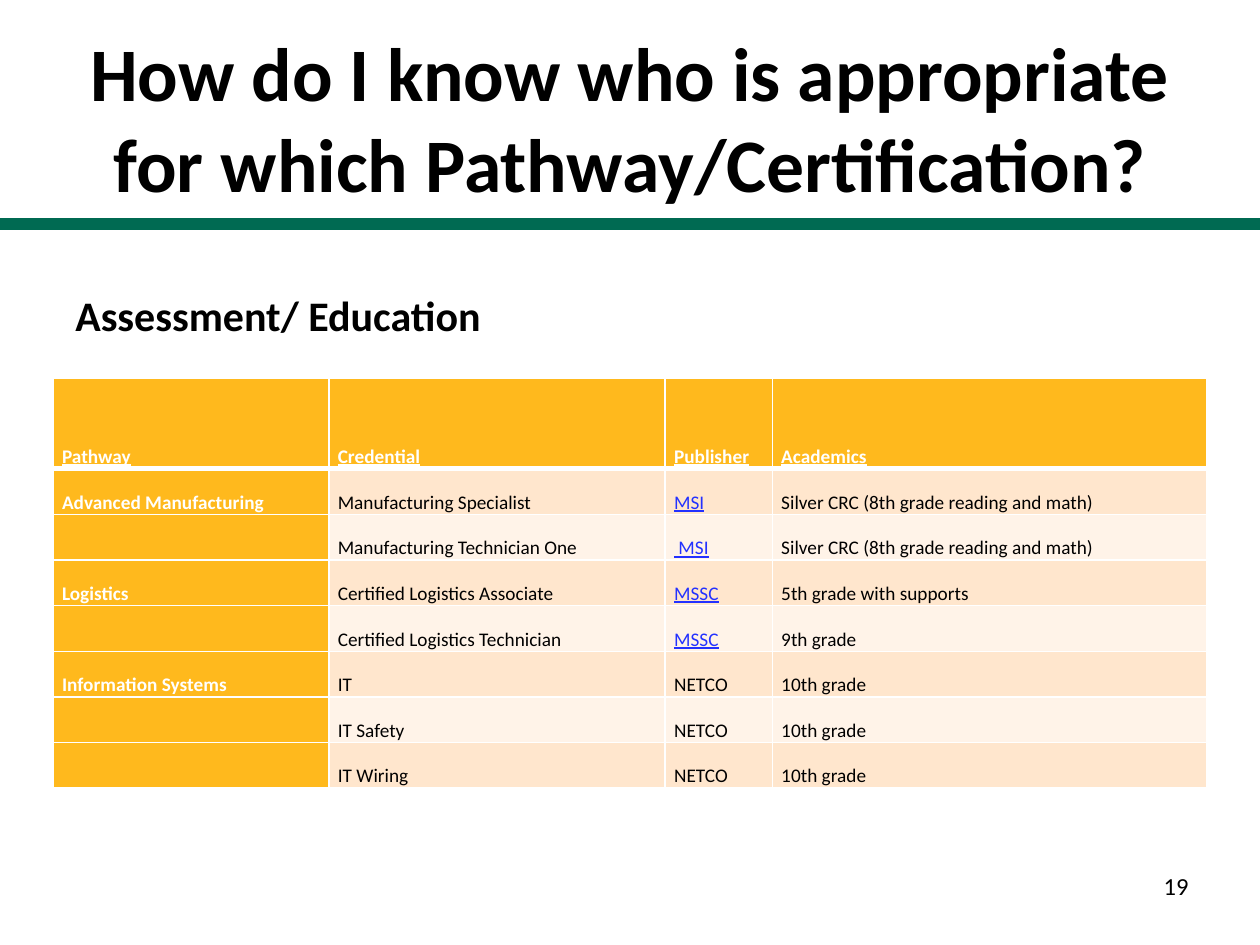
from dataclasses import dataclass

from lxml.etree import SubElement
from pptx import Presentation
from pptx.dml.color import RGBColor
from pptx.enum.shapes import MSO_CONNECTOR as Connector
from pptx.enum.text import MSO_ANCHOR as Anchor, PP_ALIGN as Align
from pptx.oxml import parse_xml
from pptx.oxml.ns import nsdecls, qn
from pptx.util import Cm, Pt


@dataclass(frozen=True)
class Theme:
    font: str = "Calibri"
    black: str = "000000"
    white: str = "FFFFFF"
    green: str = "006A52"
    amber: str = "FFB91D"
    link: str = "2331FF"
    bands: tuple = ("FFE6CD", "FFF3E8")
    title_size: float = 43.2
    heading_size: float = 24
    number_size: float = 14
    table_size: float = 11


THEME = Theme()
SLIDE_WIDTH, SLIDE_HEIGHT = 25.4, 19.05

COLUMN_WIDTHS = (5.56, 6.78, 2.16, 8.76)
HEADER_HEIGHT, ROW_HEIGHT = 1.83, 0.92
LINKED_PUBLISHERS = ("MSI", "MSSC")
ROWS = (
    ("Pathway", "Credential", "Publisher", "Academics"),
    ("Advanced Manufacturing", "Manufacturing Specialist", "MSI",
     "Silver CRC (8th grade reading and math)"),
    ("", "Manufacturing Technician One", " MSI",
     "Silver CRC (8th grade reading and math)"),
    ("Logistics", "Certified Logistics Associate", "MSSC",
     "5th grade with supports"),
    ("", "Certified Logistics Technician", "MSSC", "9th grade"),
    ("Information Systems", "IT", "NETCO", "10th grade"),
    ("", "IT Safety", "NETCO", "10th grade"),
    ("", "IT Wiring", "NETCO", "10th grade"),
)


def set_attributes(target, values):
    for name, value in values.items():
        setattr(target, name, value)


def format_font(font, size, color, **values):
    set_attributes(font, {"name": THEME.font, "size": Pt(size), **values})
    font.color.rgb = RGBColor.from_string(color)


def add_text(slide, text, box, size, bold=False, align=Align.LEFT,
             anchor=Anchor.TOP):
    shape = slide.shapes.add_textbox(*map(Cm, box))
    frame = shape.text_frame
    set_attributes(frame, {"word_wrap": True, "vertical_anchor": anchor})
    paragraph = frame.paragraphs[0]
    paragraph.alignment = align
    run = paragraph.add_run()
    run.text = text
    format_font(run.font, size, THEME.black, bold=bold)


def add_rule(slide, y, weight):
    rule = slide.shapes.add_connector(
        Connector.STRAIGHT, Cm(0), Cm(y), Cm(SLIDE_WIDTH), Cm(y))
    rule.line.width = Pt(weight)
    rule.line.color.rgb = RGBColor.from_string(THEME.green)
    SubElement(rule.element.spPr, qn("a:effectLst"))


def set_borders(cell, weights):
    properties = cell._tc.get_or_add_tcPr()
    for position, (side, weight) in enumerate(weights.items()):
        properties.insert(position, parse_xml(
            f'<a:ln{side} {nsdecls("a")} w="{Pt(weight)}"><a:solidFill>'
            f'<a:srgbClr val="{THEME.white}"/></a:solidFill></a:ln{side}>'))


def cell_style(row, column, text):
    """Return the fill and the font values that a table position calls for."""
    if row == 0 or column == 0:
        return THEME.amber, {"color": THEME.white, "bold": True,
                             "underline": row == 0}
    linked = text.strip() in LINKED_PUBLISHERS
    return THEME.bands[(row - 1) % 2], {
        "color": THEME.link if linked else THEME.black,
        "bold": False, "underline": linked}


def format_cell(cell, row, column, text):
    fill, font_values = cell_style(row, column, text)
    set_attributes(cell, {
        "vertical_anchor": Anchor.BOTTOM,
        "margin_left": Cm(0.18), "margin_right": Cm(0.18),
        "margin_top": 0, "margin_bottom": 0})
    cell.fill.solid()
    cell.fill.fore_color.rgb = RGBColor.from_string(fill)
    set_borders(cell, {"L": 1, "R": 1, "T": 3 if row == 1 else 1,
                       "B": 3 if row == 0 else 1})
    paragraph = cell.text_frame.paragraphs[0]
    paragraph.line_spacing = 1.15
    format_font(paragraph.font, THEME.table_size, **font_values)
    if text:
        run = paragraph.add_run()
        run.text = text
        format_font(run.font, THEME.table_size, **font_values)
    else:
        # Keep the empty line as small as the others
        SubElement(paragraph._p, qn("a:endParaRPr"),
                   sz=str(THEME.table_size * 100))


def add_pathway_table(slide, left, top):
    heights = [HEADER_HEIGHT] + [ROW_HEIGHT] * (len(ROWS) - 1)
    table = slide.shapes.add_table(
        len(ROWS), len(COLUMN_WIDTHS), Cm(left), Cm(top),
        Cm(sum(COLUMN_WIDTHS)), Cm(sum(heights))).table
    for column, width in zip(table.columns, COLUMN_WIDTHS):
        column.width = Cm(width)
    for row, height in zip(table.rows, heights):
        row.height = Cm(height)
    for row, texts in enumerate(ROWS):
        for column, text in enumerate(texts):
            format_cell(table.cell(row, column), row, column, text)


def main():
    presentation = Presentation()
    set_attributes(presentation, {"slide_width": Cm(SLIDE_WIDTH),
                                  "slide_height": Cm(SLIDE_HEIGHT)})
    slide = presentation.slides.add_slide(presentation.slide_layouts[6])

    # Green rule under the title
    add_rule(slide, 4.52, 7)
    add_rule(slide, 4.4, 0.5)

    # Title, heading and slide number
    add_text(slide,
             "How do I know who is appropriate for which Pathway/Certification?",
             (1.27, 0.76, 22.86, 3.18), THEME.title_size, bold=True,
             align=Align.CENTER, anchor=Anchor.MIDDLE)
    add_text(slide, "Assessment/ Education", (1.27, 5.72, 22.86, 11),
             THEME.heading_size, bold=True)
    add_text(slide, "19", (22.86, 17.35, 1.7, 1.02), THEME.number_size,
             align=Align.CENTER, anchor=Anchor.MIDDLE)

    # Pathways and their credentials
    add_pathway_table(slide, 1.07, 7.62)

    presentation.save("out.pptx")


if __name__ == "__main__":
    main()
